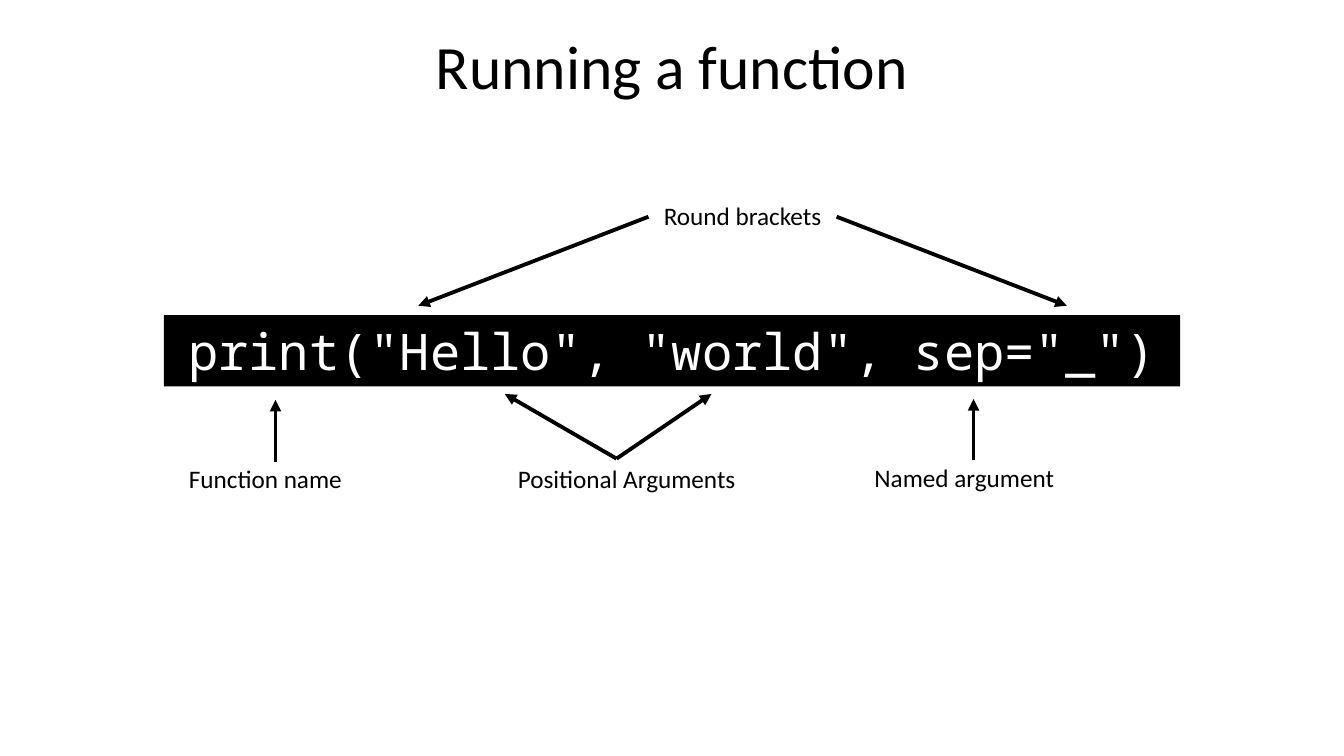
from lxml import etree
from pptx import Presentation
from pptx.dml.color import RGBColor
from pptx.enum.shapes import MSO_CONNECTOR, MSO_SHAPE
from pptx.enum.text import MSO_ANCHOR, MSO_AUTO_SIZE, PP_ALIGN
from pptx.oxml.ns import qn
from pptx.util import Inches, Pt

STRAIGHT = MSO_CONNECTOR.STRAIGHT
RECT = MSO_SHAPE.RECTANGLE
TOP, MIDDLE = MSO_ANCHOR.TOP, MSO_ANCHOR.MIDDLE
GROW, FIXED = MSO_AUTO_SIZE.SHAPE_TO_FIT_TEXT, MSO_AUTO_SIZE.NONE
CENTER = PP_ALIGN.CENTER

COLS, ROWS = 160, 90
BLACK, WHITE = "000000", "FFFFFF"
LABEL_W, LABEL_H = 34.4, 4.8


def rgb(value):
    return RGBColor.from_string(value)


class Board:
    title_font = {"name": "Calibri", "size": Pt(44)}
    label_font = {"name": "Calibri", "size": Pt(18)}
    code_font = {"name": "Noto Sans Mono", "size": Pt(36)}
    arrow_width = Pt(2.75)

    def __init__(self, prs):
        self.col = prs.slide_width / COLS
        self.row = prs.slide_height / ROWS
        self.s = prs.slides.add_slide(prs.slide_layouts[5])

    def point(self, x, y):
        return round(x * self.col), round(y * self.row)

    def fill_text(self, sp, text, font, color=BLACK, anchor=TOP, fit=GROW):
        tf = sp.text_frame
        frame = {"word_wrap": True, "auto_size": fit, "vertical_anchor": anchor}
        for name, value in frame.items():
            setattr(tf, name, value)
        p = tf.paragraphs[0]
        p.alignment = CENTER
        r = p.add_run()
        r.text = text
        for name, value in font.items():
            setattr(r.font, name, value)
        r.font.color.rgb = rgb(color)

    def title(self, text, x, y, w, h):
        sp = self.s.shapes.title
        sp.left, sp.top = self.point(x, y)
        sp.width, sp.height = self.point(w, h)
        self.fill_text(sp, text, self.title_font, anchor=MIDDLE, fit=FIXED)

    def code(self, text, x, y, w, h):
        sp = self.s.shapes.add_shape(RECT, *self.point(x, y), *self.point(w, h))
        sp.shadow.inherit = False
        sp.fill.solid()
        sp.fill.fore_color.rgb = rgb(BLACK)
        sp.line.fill.background()
        self.fill_text(sp, text, self.code_font, WHITE)

    def label(self, text, center, y):
        corner = self.point(center - LABEL_W / 2, y)
        sp = self.s.shapes.add_textbox(*corner, *self.point(LABEL_W, LABEL_H))
        self.fill_text(sp, text, self.label_font)

    def arrow(self, start, end):
        sp = self.s.shapes.add_connector(
            STRAIGHT, *self.point(*start), *self.point(*end))
        sp.line.color.rgb = rgb(BLACK)
        sp.line.width = self.arrow_width
        props = sp.element.spPr
        etree.SubElement(props.find(qn("a:ln")), qn("a:tailEnd"), type="triangle")
        etree.SubElement(props, qn("a:effectLst"))


def main():
    prs = Presentation()
    prs.slide_width, prs.slide_height = Inches(13.33), Inches(7.5)
    board = Board(prs)
    board.title("Running a function", 11, -1, 138, 17.4)
    board.code('print("Hello", "world", sep="_")', 19.5, 37.5, 121, 8.5)

    callouts = [
        ("Round brackets", 88.4, 23.3,
         [((77.2, 25.8), (49.8, 36.4)), ((99.6, 25.8), (127, 36.4))]),
        ("Function name", 31.6, 54.6, [((32.8, 55), (32.8, 47.6))]),
        ("Positional Arguments", 74.6, 54.6,
         [((73.4, 54.6), (60.1, 46.9)), ((73.4, 54.6), (84.7, 46.9))]),
        ("Named argument", 114.8, 54.4, [((115.9, 54.8), (115.9, 47.5))]),
    ]
    for text, center, y, arrows in callouts:
        board.label(text, center, y)
        for start, end in arrows:
            board.arrow(start, end)

    prs.save("out.pptx")


if __name__ == "__main__":
    main()
